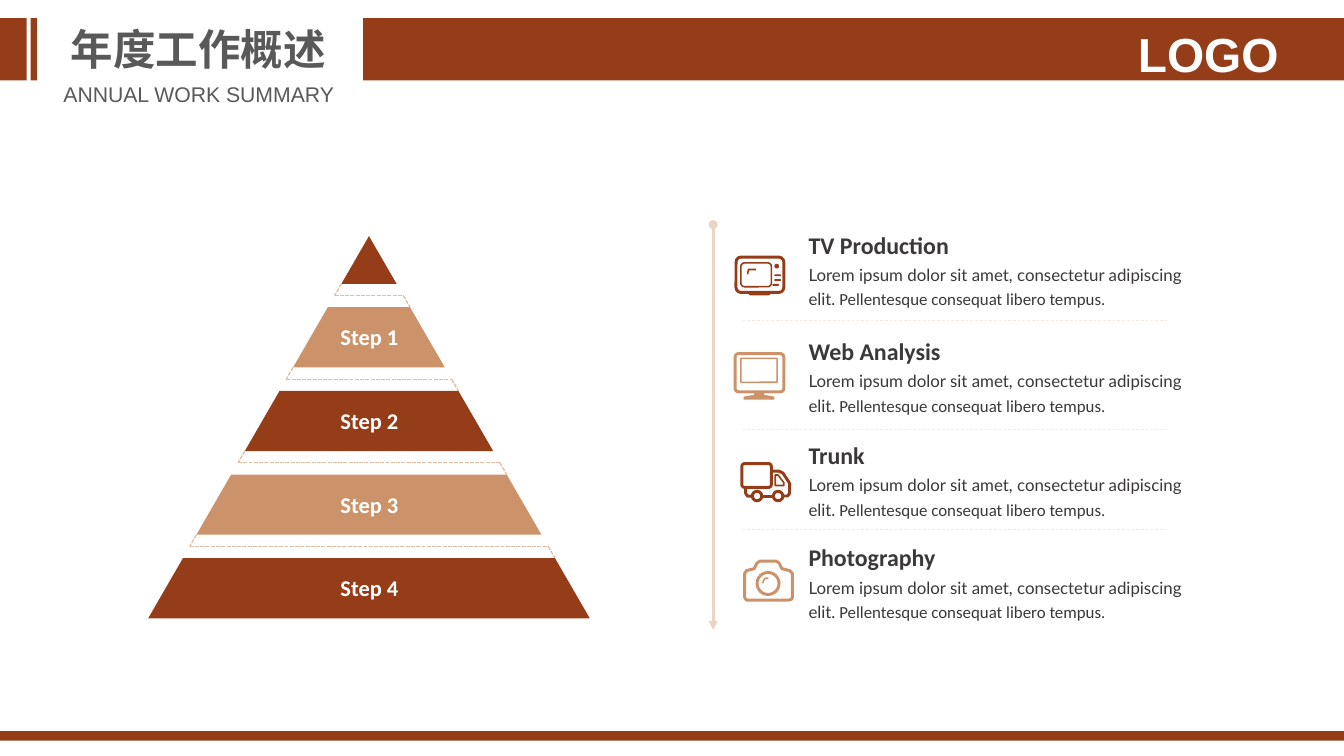
from lxml import etree
from pptx import Presentation
from pptx.dml.color import RGBColor
from pptx.enum.dml import MSO_LINE
from pptx.enum.shapes import MSO_CONNECTOR, MSO_SHAPE
from pptx.enum.text import MSO_AUTO_SIZE, PP_ALIGN
from pptx.oxml.ns import qn
from pptx.util import Inches, Pt

RUST = RGBColor(0x95, 0x3D, 0x19)
TAN = RGBColor(0xCC, 0x93, 0x6B)
DASH_TAN = RGBColor(0xE0, 0xBE, 0xA6)
AXIS_TAN = RGBColor(0xEB, 0xD4, 0xC4)
PALE_TAN = RGBColor(0xF5, 0xE9, 0xE1)
DARK = RGBColor(0x3A, 0x38, 0x38)
GRAY = RGBColor(0x59, 0x59, 0x59)
WHITE = RGBColor(0xFF, 0xFF, 0xFF)

SLIDE_WIDTH, SLIDE_HEIGHT = 14.06, 7.91
THICK, THIN = 2.25, 1.2


# Basic parts
def paint(shape, fill=None, line=None, weight=THICK):
    shape.shadow.inherit = False
    if fill is None:
        shape.fill.background()
    else:
        shape.fill.solid()
        shape.fill.fore_color.rgb = fill
    if line is None:
        shape.line.fill.background()
    else:
        shape.line.color.rgb = line
        shape.line.width = Pt(weight)
        etree.SubElement(shape.element.spPr.find(qn("a:ln")), qn("a:round"))


def add_preset(slide, kind, left, top, width, height, radius=None, **style):
    shape = slide.shapes.add_shape(
        kind, Inches(left), Inches(top), Inches(width), Inches(height))
    if radius is not None:
        shape.adjustments[0] = radius
    paint(shape, **style)


def add_outline(slide, left, top, points, close=True, **style):
    corners = [(Inches(left + x), Inches(top + y)) for x, y in points]
    builder = slide.shapes.build_freeform(*corners[0])
    builder.add_line_segments(corners[1:], close=close)
    paint(builder.convert_to_shape(), **style)


def add_line(slide, start, end, color, weight, dash=None, head=None, tail=None):
    connector = slide.shapes.add_connector(
        MSO_CONNECTOR.STRAIGHT, *(Inches(value) for value in start + end))
    connector.line.color.rgb = color
    connector.line.width = Pt(weight)
    if dash is not None:
        connector.line.dash_style = dash
    properties = connector.element.spPr
    for tag, kind in (("a:headEnd", head), ("a:tailEnd", tail)):
        if kind:
            etree.SubElement(properties.find(qn("a:ln")), qn(tag), type=kind)
    etree.SubElement(properties, qn("a:effectLst"))


def add_text(slide, box, texts, size, color, fonts=("Calibri",), bold=False,
             align=PP_ALIGN.LEFT, wrap=False):
    shape = slide.shapes.add_textbox(*(Inches(value) for value in box))
    frame = shape.text_frame
    frame.word_wrap = wrap
    frame.auto_size = MSO_AUTO_SIZE.SHAPE_TO_FIT_TEXT
    paragraph = frame.paragraphs[0]
    paragraph.alignment = align
    for text, font in zip(texts, fonts):
        run = paragraph.add_run()
        run.text = text
        run.font.name = font
        run.font.size = Pt(size)
        run.font.bold = bold
        run.font.color.rgb = color
    return frame


# Header and footer bands
def add_frame(slide):
    bands = [(3.8, 0.19, SLIDE_WIDTH - 3.8, 0.65), (0, 0.19, 0.28, 0.65),
             (0.32, 0.19, 0.07, 0.65), (0, 7.65, SLIDE_WIDTH, 0.1)]
    for band in bands:
        add_preset(slide, MSO_SHAPE.RECTANGLE, *band, fill=RUST)
    heading = dict(fonts=("Arial",), align=PP_ALIGN.CENTER)
    add_text(slide, (0.63, 0.19, 2.89, 0.64), ["年度工作概述"], 32, GRAY,
             bold=True, **heading)
    add_text(slide, (0.55, 0.8, 3.06, 0.37), ["ANNUAL WORK SUMMARY"], 16, GRAY,
             **heading)
    logo = add_text(slide, (11.6, 0.21, 2.08, 0.61), ["LOGO"], 36, WHITE,
                    bold=True, wrap=True, **heading)
    logo.margin_left = logo.margin_right = logo.margin_bottom = 0
    logo.margin_top = Inches(0.05)


# Pyramid of a tip and four steps, joined by dashed folds
def add_pyramid(slide, left, top, width, height):
    center = left + width / 2
    band_height, pitch, tip_height, gap = 0.63, 0.875, 0.5, 0.245

    def edge(y, side):
        return center + side * (y - top) / height * width / 2, y

    def add_band(upper, lower, color):
        corners = [edge(upper, -1), edge(upper, 1), edge(lower, 1), edge(lower, -1)]
        add_outline(slide, 0, 0, corners, fill=color)

    add_band(top, top + tip_height, RUST)
    first = top + tip_height + gap
    for index in range(4):
        upper = first + index * pitch
        fold = [edge(upper - gap, -1), edge(upper - gap / 2, -1),
                edge(upper - gap / 2, 1), edge(upper, 1)]
        for start, end in zip(fold, fold[1:]):
            add_line(slide, start, end, DASH_TAN, 1, MSO_LINE.SQUARE_DOT)
        add_band(upper, upper + band_height, RUST if index % 2 else TAN)
        add_text(slide, (center - 0.45, upper + 0.12, 0.91, 0.38),
                 [f"Step {index + 1}"], 16.9, WHITE, bold=True,
                 align=PP_ALIGN.CENTER)


# Icons, each about 0.54 wide
def add_television(slide, left, top, color):
    rounded = MSO_SHAPE.ROUNDED_RECTANGLE
    add_preset(slide, rounded, left + 0.02, top + 0.02, 0.5, 0.37, 0.14, line=color)
    add_preset(slide, rounded, left + 0.07, top + 0.08, 0.32, 0.25, 0.15,
               line=color, weight=THIN)
    add_preset(slide, rounded, left + 0.15, top + 0.38, 0.23, 0.04, 0.5, fill=color)
    add_preset(slide, MSO_SHAPE.OVAL, left + 0.42, top + 0.09, 0.05, 0.05, fill=color)
    for x, y in ((0.42, 0.2), (0.42, 0.25), (0.4, 0.3)):
        add_preset(slide, rounded, left + x, top + y, 0.07, 0.02, 0.5, fill=color)
    add_outline(slide, left, top, [(0.14, 0.2), (0.15, 0.15), (0.23, 0.15)],
                close=False, line=color, weight=THIN)


def add_monitor(slide, left, top, color):
    rounded = MSO_SHAPE.ROUNDED_RECTANGLE
    add_preset(slide, rounded, left + 0.02, top + 0.02, 0.51, 0.4, 0.09, line=color)
    add_preset(slide, rounded, left + 0.08, top + 0.07, 0.38, 0.25, 0.03,
               line=color, weight=THIN)
    add_outline(slide, left, top, [
        (0.22, 0.42), (0.32, 0.42), (0.32, 0.45), (0.43, 0.47), (0.43, 0.5),
        (0.11, 0.5), (0.11, 0.47), (0.22, 0.45)], fill=color)


def add_truck(slide, left, top, color):
    add_preset(slide, MSO_SHAPE.ROUNDED_RECTANGLE, left + 0.02, top + 0.02,
               0.31, 0.25, 0.12, line=color)
    cab = [(0.33, 0.1), (0.41, 0.1), (0.45, 0.12), (0.51, 0.21), (0.52, 0.23),
           (0.52, 0.33), (0.5, 0.36), (0.46, 0.36)]
    add_outline(slide, left, top, cab, close=False, line=color)
    add_outline(slide, left, top,
                [(0.06, 0.27), (0.06, 0.33), (0.08, 0.36), (0.12, 0.36)],
                close=False, line=color)
    add_outline(slide, left, top, [(0.24, 0.36), (0.34, 0.36)],
                close=False, line=color)
    add_outline(slide, left, top,
                [(0.37, 0.14), (0.4, 0.14), (0.46, 0.22), (0.46, 0.25), (0.37, 0.25)],
                line=color, weight=THIN)
    for x in (0.13, 0.35):
        add_preset(slide, MSO_SHAPE.OVAL, left + x, top + 0.31, 0.1, 0.1, line=color)


def add_camera(slide, left, top, color):
    body = [(0.02, 0.15), (0.04, 0.12), (0.12, 0.1), (0.15, 0.04), (0.18, 0.02),
            (0.35, 0.02), (0.38, 0.04), (0.41, 0.1), (0.49, 0.12), (0.52, 0.15),
            (0.52, 0.4), (0.51, 0.42), (0.48, 0.43), (0.05, 0.43), (0.03, 0.42),
            (0.02, 0.4)]
    add_outline(slide, left, top, body, line=color)
    add_preset(slide, MSO_SHAPE.OVAL, left + 0.15, top + 0.14, 0.23, 0.23, line=color)
    add_outline(slide, left, top,
                [(0.21, 0.25), (0.22, 0.22), (0.24, 0.2), (0.27, 0.2)],
                close=False, line=color, weight=THIN)


# Services beside the arrow; offsets are taken from the top of the arrow
def add_services(slide, left, top, height):
    add_line(slide, (left, top), (left, top + height), AXIS_TAN, 2.25,
             head="oval", tail="triangle")
    for offset in (1, 2.14, 3.19):
        add_line(slide, (left + 0.31, top + offset), (left + 4.77, top + offset),
                 PALE_TAN, 0.5, MSO_LINE.DASH)
    services = [
        ("TV Production", 1.68, 0.01, add_television, (0.22, 0.32), RUST),
        ("Web Analysis", 1.65, 1.12, add_monitor, (0.21, 1.33), TAN),
        ("Trunk", 0.79, 2.21, add_truck, (0.28, 2.48), RUST),
        ("Photography", 1.54, 3.28, add_camera, (0.31, 3.5), TAN),
    ]
    description = ["Lorem ipsum dolor sit amet, consectetur adipiscing elit.",
                   " Pellentesque consequat libero tempus."]
    for name, width, offset, add_icon, (icon_x, icon_y), color in services:
        add_icon(slide, left + icon_x, top + icon_y, color)
        add_text(slide, (left + 0.9, top + offset, width, 0.4), [name], 18, DARK,
                 bold=True)
        frame = add_text(slide, (left + 0.9, top + offset + 0.32, 4.19, 0.87),
                         description, 12.7, DARK, fonts=("Lato", "Calibri"), wrap=True)
        frame.paragraphs[0].line_spacing = 1.2


def main():
    presentation = Presentation()
    presentation.slide_width = Inches(SLIDE_WIDTH)
    presentation.slide_height = Inches(SLIDE_HEIGHT)
    slide = presentation.slides.add_slide(presentation.slide_layouts[6])
    add_pyramid(slide, 1.55, 2.47, 4.62, 4)
    add_services(slide, 7.46, 2.35, 4.24)
    add_frame(slide)
    presentation.save("out.pptx")


if __name__ == "__main__":
    main()
